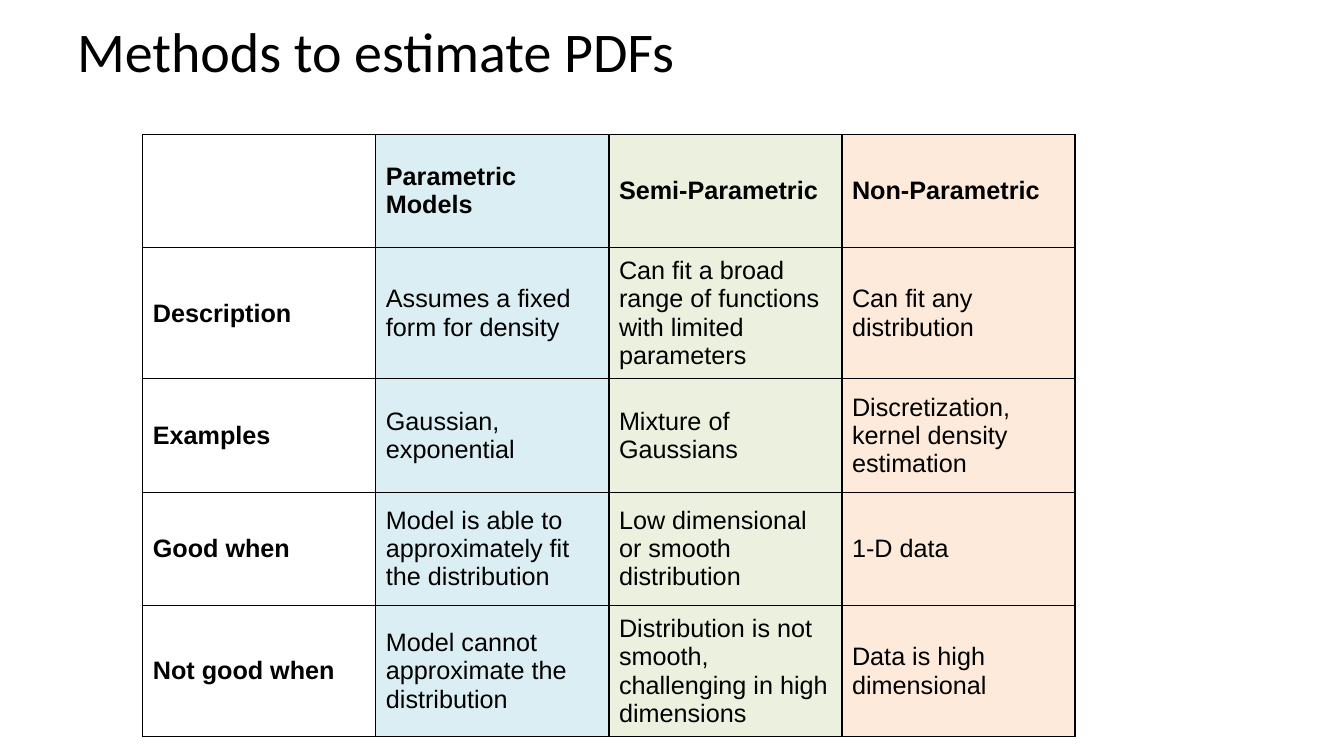
"""Build a slide that compares three ways to estimate PDFs in a table."""
from lxml import etree
from pptx import Presentation
from pptx.dml.color import RGBColor
from pptx.enum import text
from pptx.oxml import ns
from pptx.util import Pt

COLORS = {
    "ink": "000000",
    "parametric": "DBEEF4",
    "semi": "EBF1DE",
    "non": "FDEADA",
}
COLUMN_FILLS = [None, "parametric", "semi", "non"]
METHODS = [
    ["", "Parametric Models", "Semi-Parametric", "Non-Parametric"],
    ["Description", "Assumes a fixed form for density",
     "Can fit a broad range of functions with limited parameters",
     "Can fit any distribution"],
    ["Examples", "Gaussian, exponential", "Mixture of Gaussians",
     "Discretization, kernel density estimation"],
    ["Good when", "Model is able to approximately fit the distribution",
     "Low dimensional or smooth distribution", "1-D data"],
    ["Not good when", "Model cannot approximate the distribution",
     "Distribution is not smooth, challenging in high dimensions",
     "Data is high dimensional"],
]


def write(frame, words, *, size, font, bold=False):
    span = frame.paragraphs[0].add_run()
    span.text = words
    span.font.size = Pt(size)
    span.font.name = font
    span.font.bold = bold
    span.font.color.rgb = RGBColor.from_string(COLORS["ink"])


def add_title(page, words):
    box = page.shapes.add_textbox(Pt(48), Pt(0), Pt(864), Pt(72))
    frame = box.text_frame
    frame.word_wrap = True
    frame.vertical_anchor = text.MSO_ANCHOR.MIDDLE
    write(frame, words, size=40, font="Calibri")


def outline_cell(cell, color, width):
    properties = cell._tc.get_or_add_tcPr()
    for position, side in enumerate(("lnL", "lnR", "lnT", "lnB")):
        line = etree.Element(ns.qn(f"a:{side}"), w=str(Pt(width)))
        fill = etree.SubElement(line, ns.qn("a:solidFill"))
        etree.SubElement(fill, ns.qn("a:srgbClr"), val=color)
        properties.insert(position, line)


def fill_cell(cell, fill):
    if fill:
        cell.fill.solid()
        cell.fill.fore_color.rgb = RGBColor.from_string(COLORS[fill])
    else:
        cell.fill.background()


def add_methods_table(page, rows, *, column_width, row_height):
    columns = len(rows[0])
    table = page.shapes.add_table(
        len(rows), columns, Pt(102), Pt(96),
        Pt(column_width * columns), Pt(row_height * len(rows))).table
    table.first_row = False
    table.horz_banding = False
    for r, row in enumerate(rows):
        for c, words in enumerate(row):
            cell = table.cell(r, c)
            cell.vertical_anchor = text.MSO_ANCHOR.MIDDLE
            fill_cell(cell, COLUMN_FILLS[c])
            outline_cell(cell, COLORS["ink"], 1)
            if words:
                write(cell.text_frame, words, size=18, font="Arial",
                      bold=r == 0 or c == 0)


def main():
    deck = Presentation()
    deck.slide_width, deck.slide_height = Pt(960), Pt(540)
    page = deck.slides.add_slide(deck.slide_layouts[6])
    add_title(page, "Methods to estimate PDFs")
    add_methods_table(page, METHODS, column_width=166.5, row_height=81)
    deck.save("out.pptx")


if __name__ == "__main__":
    main()
